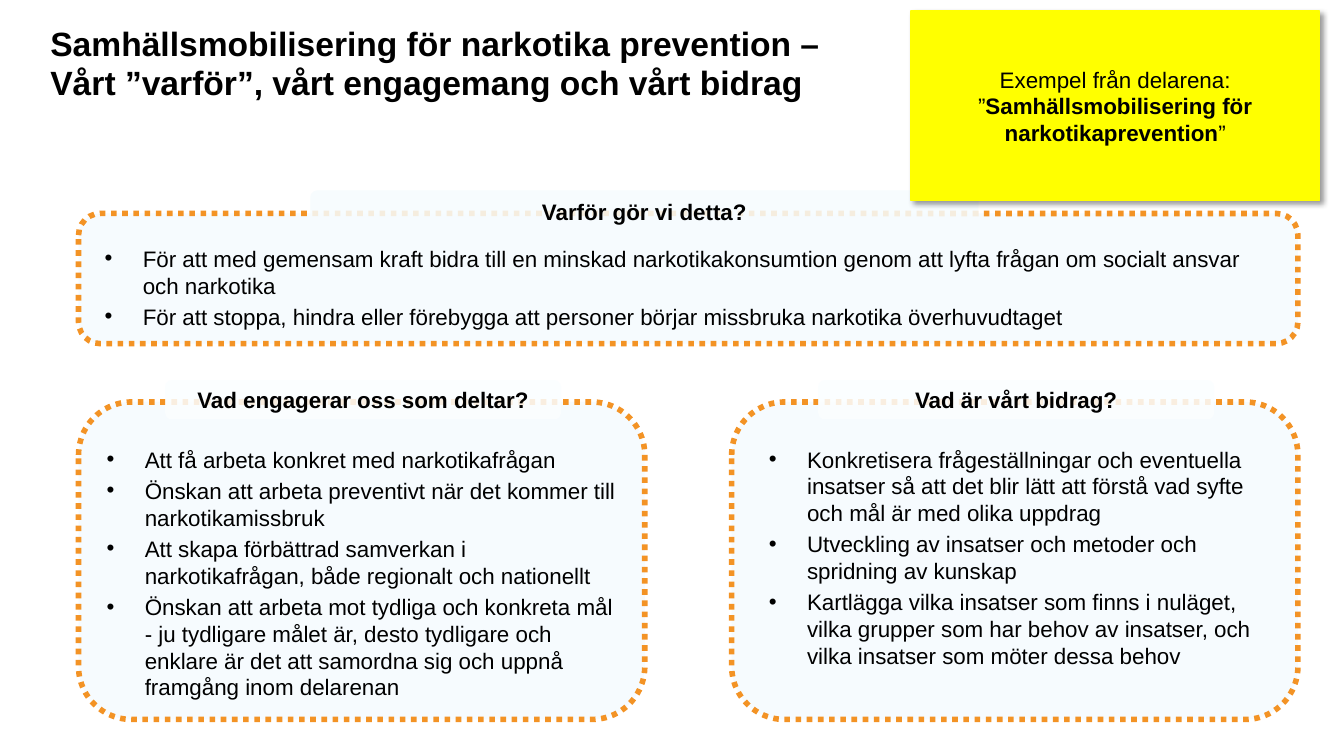
from dataclasses import dataclass

from lxml.etree import SubElement
from pptx import Presentation
from pptx.dml.color import RGBColor
from pptx.enum.dml import MSO_LINE
from pptx.enum.shapes import MSO_SHAPE
from pptx.enum.text import MSO_ANCHOR, PP_ALIGN
from pptx.oxml.ns import qn
from pptx.util import Cm, Pt


@dataclass(frozen=True)
class Theme:
    font: str = "Arial"
    title: int = 24
    body: int = 16
    text: str = "000000"
    panel: str = "F6FBFE"
    border: str = "F39325"
    wide_label: str = "F6FCFE"
    label: str = "FBFEFF"
    note: str = "FFFF00"


THEME = Theme()

WHY = [
    "För att med gemensam kraft bidra till en minskad narkotikakonsumtion genom att lyfta frågan om socialt ansvar och narkotika",
    "För att stoppa, hindra eller förebygga att personer börjar missbruka narkotika överhuvudtaget",
]
ENGAGEMENT = [
    "Att få arbeta konkret med narkotikafrågan",
    "Önskan att arbeta preventivt när det kommer till narkotikamissbruk",
    "Att skapa förbättrad samverkan i narkotikafrågan, både regionalt och nationellt",
    "Önskan att arbeta mot tydliga och konkreta mål - ju tydligare målet är, desto tydligare och enklare är det att samordna sig och uppnå framgång inom delarenan",
]
CONTRIBUTION = [
    "Konkretisera frågeställningar och eventuella insatser så att det blir lätt att förstå vad syfte och mål är med olika uppdrag",
    "Utveckling av insatser och metoder och spridning av kunskap",
    "Kartlägga vilka insatser som finns i nuläget, vilka grupper som har behov av insatser, och vilka insatser som möter dessa behov",
]


def cm_box(box):
    return [Cm(v) for v in box]


def add_run(p, text, size=THEME.body, bold=False):
    r = p.add_run()
    r.text = text
    r.font.name = THEME.font
    r.font.size = Pt(size)
    r.font.bold = bold
    r.font.color.rgb = RGBColor.from_string(THEME.text)


def add_filled_shape(s, kind, box, color):
    sp = s.shapes.add_shape(kind, *cm_box(box))
    sp.shadow.inherit = False
    sp.fill.solid()
    sp.fill.fore_color.rgb = RGBColor.from_string(color)
    sp.line.fill.background()
    return sp


def set_line(sp, color, width):
    sp.line.color.rgb = RGBColor.from_string(color)
    sp.line.width = Pt(width)


def centred_paragraph(sp):
    tf = sp.text_frame
    tf.word_wrap = True
    tf.vertical_anchor = MSO_ANCHOR.MIDDLE
    p = tf.paragraphs[0]
    p.alignment = PP_ALIGN.CENTER
    return p


def add_title(s, lines, box):
    tf = s.shapes.add_textbox(*cm_box(box)).text_frame
    tf.word_wrap = True
    tf.vertical_anchor = MSO_ANCHOR.BOTTOM
    p = tf.paragraphs[0]
    p.line_spacing = 0.95
    for i, line in enumerate(lines):
        if i:
            p.add_line_break()
        add_run(p, line, THEME.title, True)


def add_panel(s, box):
    sp = add_filled_shape(s, MSO_SHAPE.ROUNDED_RECTANGLE, box, THEME.panel)
    set_line(sp, THEME.border, 4)
    sp.line.dash_style = MSO_LINE.ROUND_DOT


def add_label(s, text, box, color):
    """Add a heading on a see-through patch over the panel's top border."""
    sp = add_filled_shape(s, MSO_SHAPE.ROUNDED_RECTANGLE, box, color)
    rgb = sp.fill._xPr.find(qn("a:solidFill"))[0]
    SubElement(rgb, qn("a:alpha"), val="86000")
    add_run(centred_paragraph(sp), text, bold=True)


def add_bullets(s, items, box):
    tf = s.shapes.add_textbox(*cm_box(box)).text_frame
    tf.word_wrap = True
    tf.margin_left = Cm(0.1)
    tf.margin_top = tf.margin_right = tf.margin_bottom = 0
    for i, item in enumerate(items):
        p = tf.add_paragraph() if i else tf.paragraphs[0]
        p.space_after = Pt(3.1)
        pPr = p._p.get_or_add_pPr()
        pPr.set("marL", str(Cm(0.96)))
        pPr.set("indent", str(-Cm(0.96)))
        SubElement(pPr, qn("a:buFont"), typeface=THEME.font)
        SubElement(pPr, qn("a:buChar"), char="•")
        add_run(p, item)


def add_shadow(sp):
    effects = sp._element.spPr.find(qn("a:effectLst"))
    shadow = SubElement(effects, qn("a:outerShdw"), blurRad=str(Pt(4)),
                        dist=str(Pt(3)), dir="2700000", algn="tl", rotWithShape="0")
    rgb = SubElement(shadow, qn("a:srgbClr"), val=THEME.text)
    SubElement(rgb, qn("a:alpha"), val="40000")


def add_note(s, runs, box):
    sp = add_filled_shape(s, MSO_SHAPE.RECTANGLE, box, THEME.note)
    set_line(sp, THEME.note, 1)
    add_shadow(sp)
    p = centred_paragraph(sp)
    for text, bold in runs:
        add_run(p, text, bold=bold)


def main():
    prs = Presentation()
    prs.slide_width, prs.slide_height = Cm(33.87), Cm(19.05)
    s = prs.slides.add_slide(prs.slide_layouts[6])

    add_title(s, ["Samhällsmobilisering för narkotika prevention –",
                  "Vårt ”varför”, vårt engagemang och vårt bidrag"],
              (1.02, 0.74, 31.5, 1.98))

    add_panel(s, (1.98, 5.38, 30.73, 3.28))
    add_label(s, "Varför gör vi detta?", (7.82, 4.8, 16.84, 1.04), THEME.wide_label)
    add_bullets(s, WHY, (2.54, 6.17, 29.69, 2.49))

    columns = [
        (1.98, 2.59, "Vad engagerar oss som deltar?", ENGAGEMENT),
        (18.44, 19.28, "Vad är vårt bidrag?", CONTRIBUTION),
    ]
    for left, text_left, heading, items in columns:
        add_panel(s, (left, 10.13, 14.27, 8))
        add_label(s, heading, (left + 2.18, 9.58, 9.98, 0.99), THEME.label)
        add_bullets(s, items, (text_left, 11.23, 13.13, 6.58))

    add_note(s, [("Exempel från delarena: ”", False),
                 ("Samhällsmobilisering för narkotikaprevention", True),
                 ("”", False)],
             (22.96, 0.28, 10.29, 4.78))

    prs.save("out.pptx")


if __name__ == "__main__":
    main()
